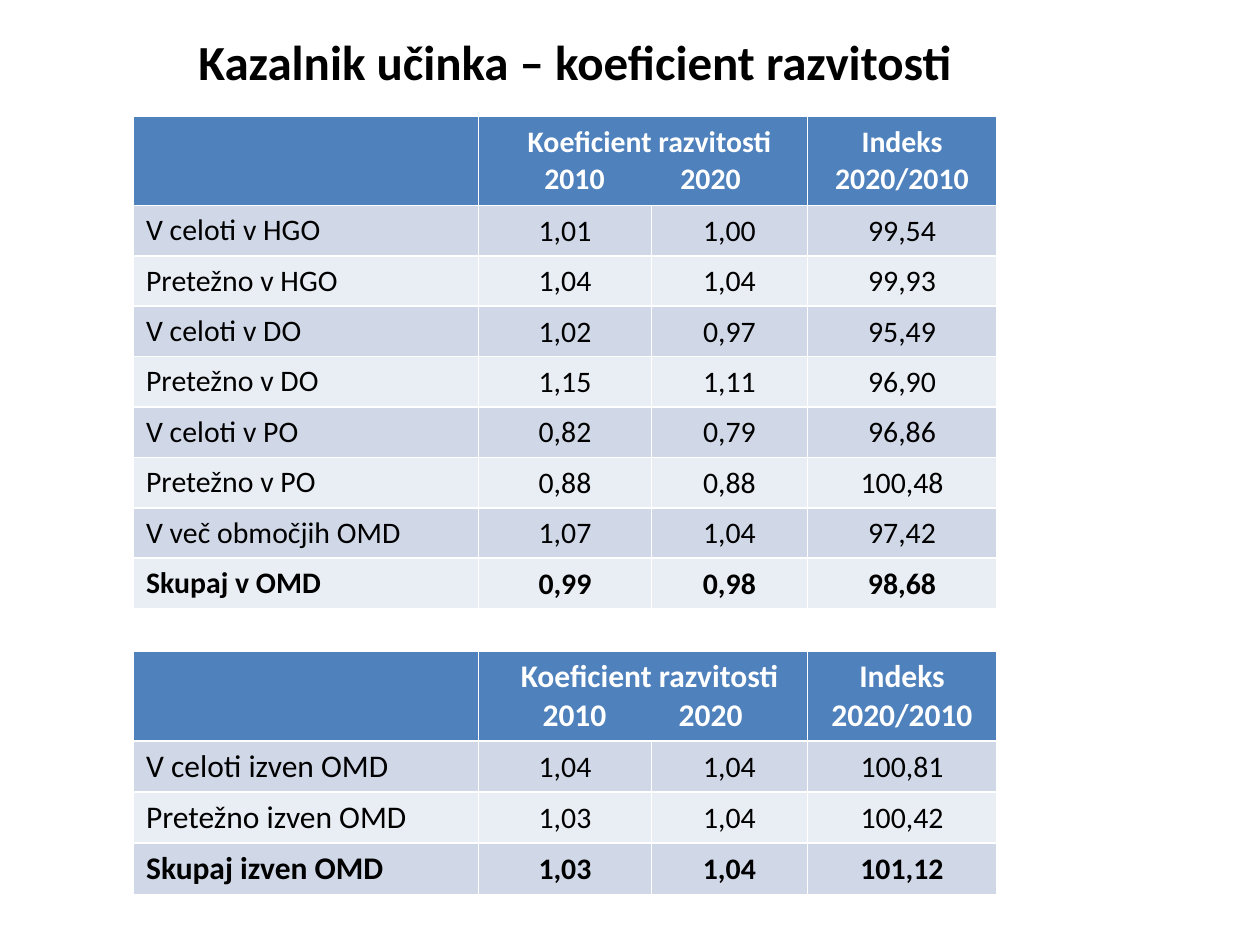
import pptx
import pptx.util
import pptx.dml.color
import pptx.enum.text
from lxml import etree

Inches = pptx.util.Inches
Pt = pptx.util.Pt
ALIGN = pptx.enum.text.PP_ALIGN
MIDDLE = pptx.enum.text.MSO_ANCHOR.MIDDLE
DRAWING_NS = "{http://schemas.openxmlformats.org/drawingml/2006/main}"

LEFT = 1.06
COLUMNS = [2.74, 1.37, 1.24, 1.5]
HEADER_HEIGHT = 0.71
ROW_HEIGHT = 0.4
YEAR_TABS = [0.66, 1.74]
NUMBER_MARGINS = {"margin_left": Inches(0.01), "margin_right": Inches(0.01),
                  "margin_top": Inches(0.01), "margin_bottom": 0}

INSIDE_ROWS = [
    ("V celoti v HGO", "1,01", "1,00", "99,54"),
    ("Pretežno v HGO", "1,04", "1,04", "99,93"),
    ("V celoti v DO", "1,02", "0,97", "95,49"),
    ("Pretežno v DO", "1,15", "1,11", "96,90"),
    ("V celoti v PO", "0,82", "0,79", "96,86"),
    ("Pretežno v PO", "0,88", "0,88", "100,48"),
    ("V več območjih OMD", "1,07", "1,04", "97,42"),
    ("Skupaj v OMD", "0,99", "0,98", "98,68"),
]
OUTSIDE_ROWS = [
    ("V celoti izven OMD", "1,04", "1,04", "100,81"),
    ("Pretežno izven OMD", "1,03", "1,04", "100,42"),
    ("Skupaj izven OMD", "1,03", "1,04", "101,12"),
]


def rgb(value):
    return pptx.dml.color.RGBColor.from_string(value)


def set_attributes(target, values):
    for name, value in values.items():
        setattr(target, name, value)


class SlideBuilder:
    font = "Calibri"
    dark, light = "000000", "FFFFFF"
    header_fill = "4F81BD"
    bands = ["D0D8E8", "E9EDF4"]

    def __init__(self, slide):
        self.slide = slide

    def add_text(self, p, text, size, color, bold=False, align=ALIGN.CENTER):
        p.alignment = align
        r = p.add_run()
        r.text = text
        set_attributes(r.font, {"name": self.font, "size": Pt(size), "bold": bold})
        r.font.color.rgb = rgb(color)

    def title(self, text, left, top, width, height):
        sp = self.slide.shapes.title
        set_attributes(sp, {"left": Inches(left), "top": Inches(top),
                            "width": Inches(width), "height": Inches(height)})
        sp.text_frame.vertical_anchor = MIDDLE
        self.add_text(sp.text_frame.paragraphs[0], text, 28, self.dark, bold=True)

    def fill(self, cell, color):
        cell.fill.solid()
        cell.fill.fore_color.rgb = rgb(color)
        cell.vertical_anchor = MIDDLE

    def year_header(self, cell, size):
        """Heading over two columns, with a year centred on each tab stop."""
        tf = cell.text_frame
        heading, years = tf.paragraphs[0], tf.add_paragraph()
        heading._p.get_or_add_pPr().set("marL", str(Inches(0.1)))
        self.add_text(heading, "Koeficient razvitosti", size, self.light, True)
        self.add_text(years, "\t2010\t2020", size, self.light, True, ALIGN.LEFT)
        tabs = etree.SubElement(years._p.get_or_add_pPr(), DRAWING_NS + "tabLst")
        for position in YEAR_TABS:
            etree.SubElement(tabs, DRAWING_NS + "tab",
                             pos=str(Inches(position)), algn="ctr")

    def table(self, top, rows, header_size, label_size, number_size=17):
        heights = [HEADER_HEIGHT] + [ROW_HEIGHT] * len(rows)
        table = self.slide.shapes.add_table(
            len(heights), len(COLUMNS), Inches(LEFT), Inches(top),
            Inches(sum(COLUMNS)), Inches(sum(heights))).table
        for column, width in zip(table.columns, COLUMNS):
            column.width = Inches(width)
        for row, height in zip(table.rows, heights):
            row.height = Inches(height)

        table.cell(0, 1).merge(table.cell(0, 2))
        for cell in table.rows[0].cells:
            self.fill(cell, self.header_fill)
        self.year_header(table.cell(0, 1), header_size)
        self.add_text(table.cell(0, 3).text_frame.paragraphs[0],
                      "Indeks 2020/2010", header_size, self.light, bold=True)

        for i, values in enumerate(rows):
            is_total = i == len(rows) - 1
            for j, value in enumerate(values):
                cell = table.cell(i + 1, j)
                self.fill(cell, self.bands[i % 2])
                p = cell.text_frame.paragraphs[0]
                if j == 0:
                    self.add_text(p, value, label_size, self.dark, is_total, ALIGN.LEFT)
                else:
                    set_attributes(cell, NUMBER_MARGINS)
                    self.add_text(p, value, number_size, self.dark, is_total)


def main():
    prs = pptx.Presentation()
    set_attributes(prs, {"slide_width": Inches(10), "slide_height": Inches(7.5)})
    builder = SlideBuilder(prs.slides.add_slide(prs.slide_layouts[5]))
    builder.title("Kazalnik učinka – koeficient razvitosti ", -0.2, 0.21, 9.61, 0.55)
    builder.table(0.92, INSIDE_ROWS, header_size=17, label_size=17)
    builder.table(5.17, OUTSIDE_ROWS, header_size=18, label_size=18)
    prs.save("out.pptx")


if __name__ == "__main__":
    main()
